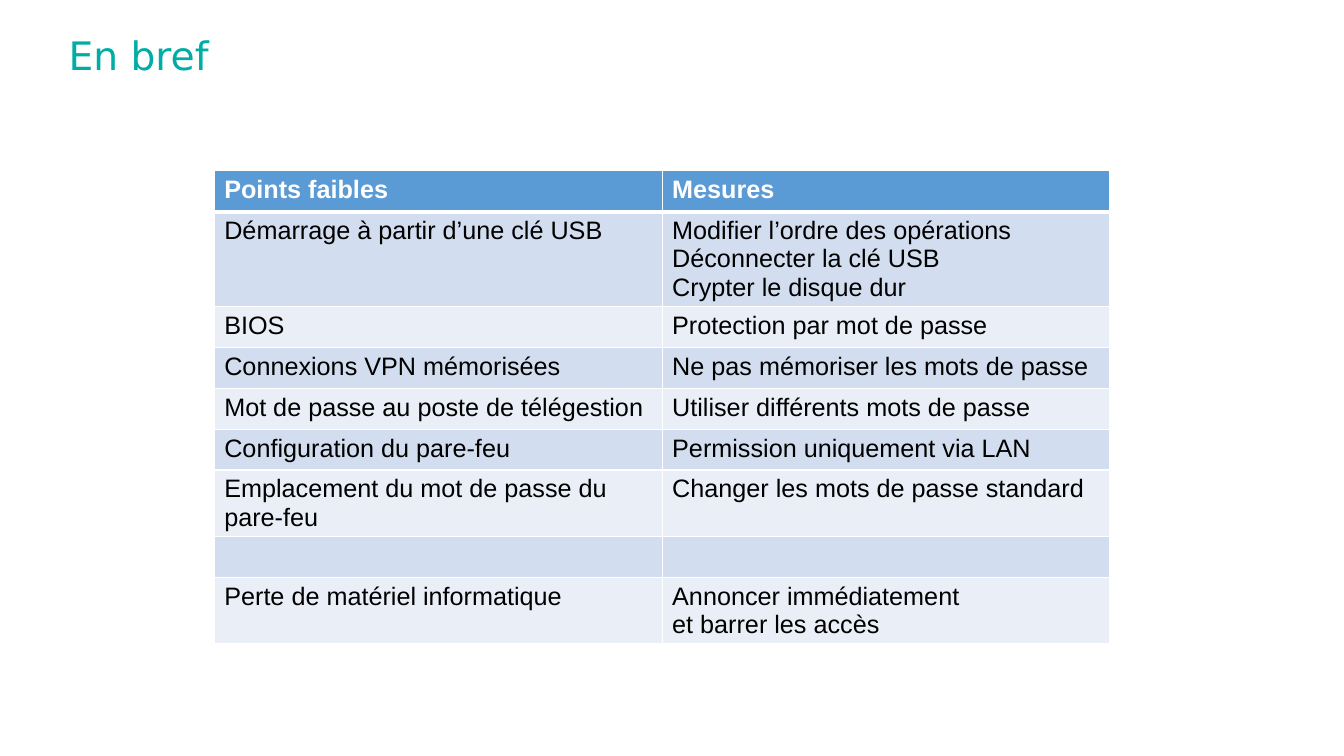
from lxml.etree import SubElement
from pptx import Presentation
from pptx.dml.color import RGBColor
from pptx.enum.text import MSO_ANCHOR, PP_ALIGN
from pptx.oxml.ns import qn
from pptx.util import Inches, Pt

ROWS = [
    ("Points faibles", "Mesures"),
    ("Démarrage à partir d’une clé USB",
     "Modifier l’ordre des opérations\nDéconnecter la clé USB\nCrypter le disque dur"),
    ("BIOS", "Protection par mot de passe"),
    ("Connexions VPN mémorisées", "Ne pas mémoriser les mots de passe"),
    ("Mot de passe au poste de télégestion", "Utiliser différents mots de passe"),
    ("Configuration du pare-feu", "Permission uniquement via LAN"),
    ("Emplacement du mot de passe du pare-feu", "Changer les mots de passe standard"),
    ("", ""),
    ("Perte de matériel informatique", "Annoncer immédiatement\vet barrer les accès"),
]


def tint(code):
    return RGBColor.from_string(code)


class Deck:
    teal, blue, white, black = "00ADA5", "5B9BD5", "FFFFFF", "000000"
    bands = ("EAEFF7", "D2DEEF")

    def __init__(self):
        self.prs = Presentation()
        self.prs.slide_width, self.prs.slide_height = Inches(13.33), Inches(7.5)
        self.slide = self.prs.slides.add_slide(self.prs.slide_layouts[5])

    def across(self, share):
        return int(self.prs.slide_width * share / 100)

    def down(self, share):
        return int(self.prs.slide_height * share / 100)

    def label(self, frame, text, face, size, color, bold=False):
        frame.text = text
        for para in frame.paragraphs:
            para.alignment = PP_ALIGN.LEFT
            for run in para.runs:
                font = run.font
                font.name, font.size, font.bold = face, Pt(size), bold
                font.color.rgb = tint(color)

    def title(self, text, left, top, width, height):
        shape = self.slide.shapes.title
        shape.left, shape.top = self.across(left), self.down(top)
        shape.width, shape.height = self.across(width), self.down(height)
        frame = shape.text_frame
        frame.margin_left = frame.margin_top = frame.margin_right = frame.margin_bottom = 0
        frame.vertical_anchor = MSO_ANCHOR.TOP
        frame.word_wrap = True
        self.label(frame, text, "DejaVu Sans", 28, self.teal)
        frame.paragraphs[0].line_spacing = 0.9

    def border(self, cell, edge, width):
        line = SubElement(cell._tc.get_or_add_tcPr(), qn(f"a:ln{edge}"), w=str(Pt(width)))
        fill = SubElement(line, qn("a:solidFill"))
        SubElement(fill, qn("a:srgbClr"), val=self.white)

    def table(self, rows, left, top, width, step):
        frame = self.slide.shapes.add_table(
            len(rows), len(rows[0]), self.across(left), self.down(top),
            self.across(width), self.down(step) * len(rows))
        for r, row in enumerate(rows):
            for c, text in enumerate(row):
                self.cell(frame.table.cell(r, c), r, text)

    def cell(self, cell, row, text):
        head = row == 0
        thick = {(0, "B"), (1, "T")}
        for edge in "LRTB":
            self.border(cell, edge, 3 if (row, edge) in thick else 1)
        cell.fill.solid()
        cell.fill.fore_color.rgb = tint(self.blue if head else self.bands[row % 2])
        self.label(cell.text_frame, text, "Arial", 18,
                   self.white if head else self.black, head)


def main():
    deck = Deck()
    deck.title("En bref", 5.1, 4.8, 88.07, 13.47)
    deck.table(ROWS, 15.94, 22.6, 66.65, 5.41)
    deck.prs.save("out.pptx")


if __name__ == "__main__":
    main()
